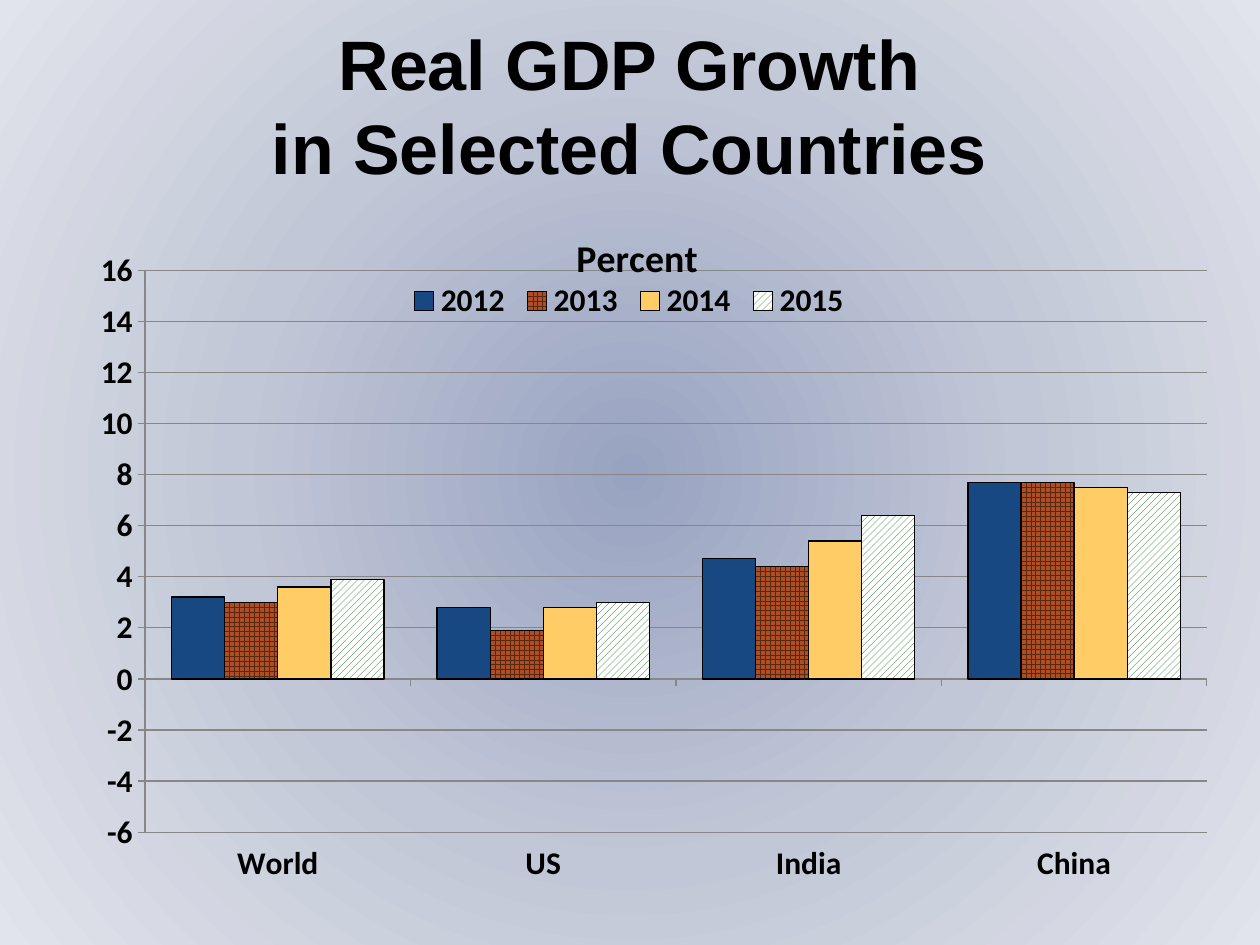
"""Build a slide with a clustered column chart of real GDP growth."""
import lxml.etree
import pptx
import pptx.chart.data
import pptx.dml.color
import pptx.enum.chart
import pptx.enum.dml
import pptx.enum.text
import pptx.oxml
import pptx.oxml.ns
import pptx.util

Inches = pptx.util.Inches
Pt = pptx.util.Pt
qn = pptx.oxml.ns.qn
RGB = pptx.dml.color.RGBColor.from_string
PATTERN = pptx.enum.dml.MSO_PATTERN

COLORS = {
    "text": "000000", "axis": "878787",
    "center": "98A3C1", "middle": "C2C7D7", "edge": "E1E4EB",
    "blue": "174882", "brown": "572711", "rust": "AE4E22",
    "yellow": "FFCC66", "green": "006600", "white": "FFFFFF",
}


def write_text(frame, text, font="Arial", size=18, bold=True, color="text"):
    for index, line in enumerate(text.split("\n")):
        para = frame.paragraphs[0] if index == 0 else frame.add_paragraph()
        para.alignment = pptx.enum.text.PP_ALIGN.CENTER
        span = para.add_run()
        span.text = line
        span.font.name = font
        span.font.size = Pt(size)
        span.font.bold = bold
        span.font.color.rgb = RGB(COLORS[color])


def set_layout(parent, inner=False, **fractions):
    for old in parent.findall(qn("c:layout")):
        parent.remove(old)
    layout = lxml.etree.Element(qn("c:layout"))
    manual = lxml.etree.SubElement(layout, qn("c:manualLayout"))
    settings = {"layoutTarget": "inner"} if inner else {}
    settings.update(xMode="edge", yMode="edge", **fractions)
    for name, value in settings.items():
        lxml.etree.SubElement(manual, qn("c:" + name)).set("val", str(value))
    overlay = parent.find(qn("c:overlay"))
    if overlay is None:
        parent.insert(0, layout)
    else:
        overlay.addprevious(layout)


deck = pptx.Presentation()
deck.slide_width = Inches(10)
deck.slide_height = Inches(7.5)
page = deck.slides.add_slide(deck.slide_layouts[6])

stops = "".join(
    f'<a:gs pos="{position * 1000}"><a:srgbClr val="{COLORS[name]}"/></a:gs>'
    for position, name in ((0, "center"), (50, "middle"), (100, "edge"))
)
background = pptx.oxml.parse_xml(
    f'<p:bg {pptx.oxml.ns.nsdecls("p", "a")}><p:bgPr><a:gradFill rotWithShape="1">'
    f'<a:gsLst>{stops}</a:gsLst><a:path path="circle">'
    '<a:fillToRect l="50000" t="50000" r="50000" b="50000"/></a:path>'
    '</a:gradFill><a:effectLst/></p:bgPr></p:bg>'
)
page.element.find(qn("p:cSld")).insert(0, background)

title_box = page.shapes.add_textbox(Inches(0.25), Inches(0.33), Inches(9.49), Inches(1))
title_box.text_frame.word_wrap = True
title_box.text_frame.vertical_anchor = pptx.enum.text.MSO_ANCHOR.MIDDLE
write_text(title_box.text_frame, "Real GDP Growth\nin Selected Countries", size=40)

growth = {
    "2012": (3.2, 2.8, 4.7, 7.7),
    "2013": (3, 1.9, 4.4, 7.7),
    "2014": (3.6, 2.8, 5.4, 7.5),
    "2015": (3.9, 3, 6.4, 7.3),
}
data = pptx.chart.data.CategoryChartData()
data.categories = ["World", "US", "India", "China"]
for year, values in growth.items():
    data.add_series(year, values)
chart = page.shapes.add_chart(
    pptx.enum.chart.XL_CHART_TYPE.COLUMN_CLUSTERED,
    Inches(0.25), Inches(1.5), Inches(9.49), Inches(5.66), data,
).chart
chart.font.name = "Calibri"
chart.font.size = Pt(18)
chart.font.bold = True
chart.font.color.rgb = RGB(COLORS["text"])

chart.has_title = True
write_text(chart.chart_title.text_frame, "Percent", font="Calibri", size=21.6)
chart.has_legend = True
chart.legend.position = pptx.enum.chart.XL_LEGEND_POSITION.TOP
chart.legend.include_in_layout = False
set_layout(chart.chart_title._element, x=0.45, y=0.05)
set_layout(chart.legend._element, x=0.31, y=0.13, w=0.38, h=0.05)
plot_area = chart.element.find(".//" + qn("c:plotArea"))
set_layout(plot_area, inner=True, x=0.095, y=0.114, w=0.888, h=0.788)

value_axis = chart.value_axis
value_axis.minimum_scale = -6
value_axis.maximum_scale = 16
value_axis.major_unit = 2
value_axis.has_major_gridlines = True
chart.category_axis.tick_label_position = pptx.enum.chart.XL_TICK_LABEL_POSITION.LOW
for axis in (value_axis, chart.category_axis):
    axis.major_tick_mark = pptx.enum.chart.XL_TICK_MARK.OUTSIDE
for lined in (value_axis, chart.category_axis, value_axis.major_gridlines):
    lined.format.line.color.rgb = RGB(COLORS["axis"])
    lined.format.line.width = Pt(0.75)

plot = chart.plots[0]
plot.gap_width = 100
plot.overlap = 0
plot.vary_by_categories = False
fills = (
    (None, "blue", None),
    (PATTERN.LARGE_GRID, "brown", "rust"),
    (None, "yellow", None),
    (PATTERN.WIDE_UPWARD_DIAGONAL, "green", "white"),
)
for series, (pattern, front, back) in zip(plot.series, fills):
    series.invert_if_negative = False
    fill = series.format.fill
    if pattern is None:
        fill.solid()
    else:
        fill.patterned()
        fill.pattern = pattern
        fill.back_color.rgb = RGB(COLORS[back])
    fill.fore_color.rgb = RGB(COLORS[front])
    series.format.line.color.rgb = RGB(COLORS["text"])
    series.format.line.width = Pt(0.75)

deck.save("out.pptx")
